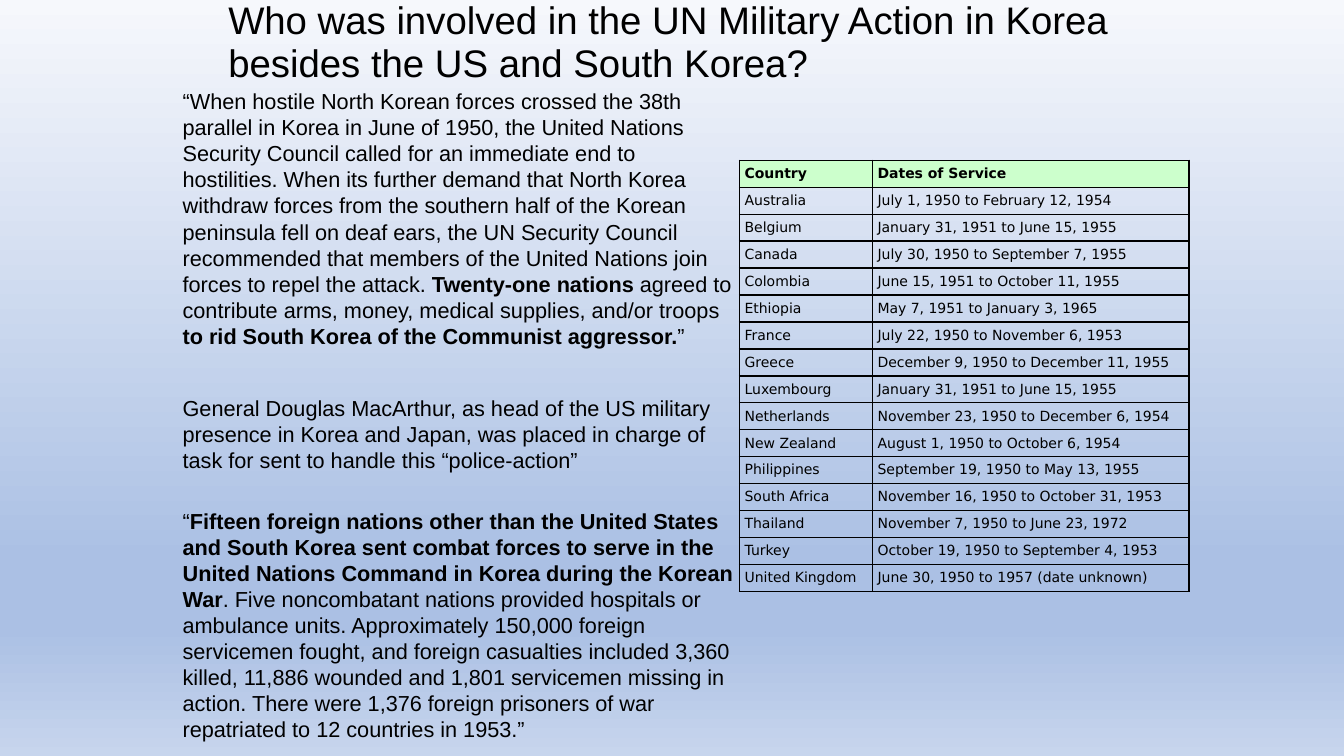
from lxml import etree
from pptx import Presentation
from pptx.dml.color import RGBColor
from pptx.enum import text
from pptx.oxml.ns import qn
from pptx.util import Pt

COLORS = {"ink": "000000", "head": "CCFFCC",
          "top": "F6F8FC", "mid": "ABC0E4", "low": "C7D5ED"}

TITLE = ("Who was involved in the UN Military Action in Korea "
         "besides the US and South Korea?")

# Each paragraph: space before, then (wording, bold) runs
STORY = [
    (0, [("“When hostile North Korean forces crossed the 38th parallel in Korea "
          "in June of 1950, the United Nations Security Council called for an "
          "immediate end to hostilities. When its further demand that North Korea "
          "withdraw forces from the southern half of the Korean peninsula fell on "
          "deaf ears, the UN Security Council recommended that members of the "
          "United Nations join forces to repel the attack. ", False),
         ("Twenty-one nations ", True),
         ("agreed to contribute arms, money, medical supplies, and/or troops ", False),
         ("to rid South Korea of the Communist aggressor.", True),
         ("”", False)]),
    (33, [("General Douglas MacArthur, as head of the US military presence in Korea "
           "and Japan, was placed in charge of task for sent to handle this "
           "“police-action”", False)]),
    (25, [("“", False),
          ("Fifteen foreign nations other than the United States and South Korea "
           "sent combat forces to serve in the United Nations Command in Korea "
           "during the Korean War", True),
          (". Five noncombatant nations provided hospitals or ambulance units. "
           "Approximately 150,000 foreign servicemen fought, and foreign casualties "
           "included 3,360 killed, 11,886 wounded and 1,801 servicemen missing in "
           "action. There were 1,376 foreign prisoners of war repatriated to 12 "
           "countries in 1953.”", False)]),
]

SERVICE = [
    ("Country", "Dates of Service"),
    ("Australia", "July 1, 1950 to February 12, 1954"),
    ("Belgium", "January 31, 1951 to June 15, 1955"),
    ("Canada", "July 30, 1950 to September 7, 1955"),
    ("Colombia", "June 15, 1951 to October 11, 1955"),
    ("Ethiopia", "May 7, 1951 to January 3, 1965"),
    ("France", "July 22, 1950 to November 6, 1953"),
    ("Greece", "December 9, 1950 to December 11, 1955"),
    ("Luxembourg", "January 31, 1951 to June 15, 1955"),
    ("Netherlands", "November 23, 1950 to December 6, 1954"),
    ("New Zealand", "August 1, 1950 to October 6, 1954"),
    ("Philippines", "September 19, 1950 to May 13, 1955"),
    ("South Africa", "November 16, 1950 to October 31, 1953"),
    ("Thailand", "November 7, 1950 to June 23, 1972"),
    ("Turkey", "October 19, 1950 to September 4, 1953"),
    ("United Kingdom", "June 30, 1950 to 1957 (date unknown)"),
]


class Page:
    """Holds the style and the current slide."""

    sans, grid = "Arial", "DejaVu Sans"

    def __init__(self, slide):
        self.slide = slide

    def font(self, para, name, size):
        para.font.name = name
        para.font.size = Pt(size)
        para.font.color.rgb = RGBColor.from_string(COLORS["ink"])

    def back(self, stops):
        fill = self.slide.background.fill
        fill.gradient()
        fill.gradient_angle = 270
        ramp = self.slide.element.find(".//" + qn("a:gsLst"))
        for old in list(ramp):
            ramp.remove(old)
        for spot, tone in stops:
            stop = etree.SubElement(ramp, qn("a:gs"), pos=str(spot * 1000))
            etree.SubElement(stop, qn("a:srgbClr"), val=COLORS[tone])

    def words(self, box, paras, size, lead, anchor):
        frame = self.slide.shapes.add_textbox(*map(Pt, box)).text_frame
        frame.word_wrap = True
        frame.vertical_anchor = anchor
        frame.margin_top = frame.margin_bottom = Pt(4)
        for i, (gap, runs) in enumerate(paras):
            para = frame.add_paragraph() if i else frame.paragraphs[0]
            para.line_spacing = lead
            if gap:
                para.space_before = Pt(gap)
            self.font(para, self.sans, size)
            for wording, bold in runs:
                run = para.add_run()
                run.text = wording
                if bold:
                    run.font.bold = True

    def border(self, cell):
        props = cell._tc.get_or_add_tcPr()
        for i, side in enumerate(("lnL", "lnR", "lnT", "lnB")):
            line = etree.Element(qn("a:" + side), w=str(Pt(1.07)))
            fill = etree.SubElement(line, qn("a:solidFill"))
            etree.SubElement(fill, qn("a:srgbClr"), val=COLORS["ink"])
            props.insert(i, line)

    def table(self, left, top, widths, high, rows):
        table = self.slide.shapes.add_table(
            len(rows), len(widths), Pt(left), Pt(top),
            Pt(sum(widths)), Pt(high * len(rows))).table
        table.first_row = table.horz_banding = False
        for col, width in zip(table.columns, widths):
            col.width = Pt(width)
        for r, row in enumerate(rows):
            table.rows[r].height = Pt(high)
            for c, wording in enumerate(row):
                self.cell(table.cell(r, c), wording, r == 0)

    def cell(self, cell, wording, head):
        cell.text = wording
        cell.vertical_anchor = text.MSO_ANCHOR.MIDDLE
        cell.margin_left = cell.margin_right = Pt(3.6)
        cell.margin_top = cell.margin_bottom = Pt(3.6)
        para = cell.text_frame.paragraphs[0]
        self.font(para, self.grid, 10)
        para.font.bold = head
        if head:
            cell.fill.solid()
            cell.fill.fore_color.rgb = RGBColor.from_string(COLORS["head"])
        else:
            cell.fill.background()
        self.border(cell)


def main():
    deck = Presentation()
    deck.slide_width, deck.slide_height = Pt(960), Pt(540)
    page = Page(deck.slides.add_slide(deck.slide_layouts[6]))

    # Background
    page.back([(0, "top"), (74, "mid"), (83, "mid"), (100, "low")])

    # Title and story
    page.words((156, -14.4, 648, 90), [(0, [(TITLE, False)])],
               27.4, 0.93, text.MSO_ANCHOR.MIDDLE)
    page.words((123.4, 59, 407.5, 479), STORY, 15.5, 1.0, text.MSO_ANCHOR.TOP)

    # Countries and dates
    page.table(528.3, 114.5, (95, 226), 19.26, SERVICE)

    deck.save("out.pptx")


if __name__ == "__main__":
    main()
